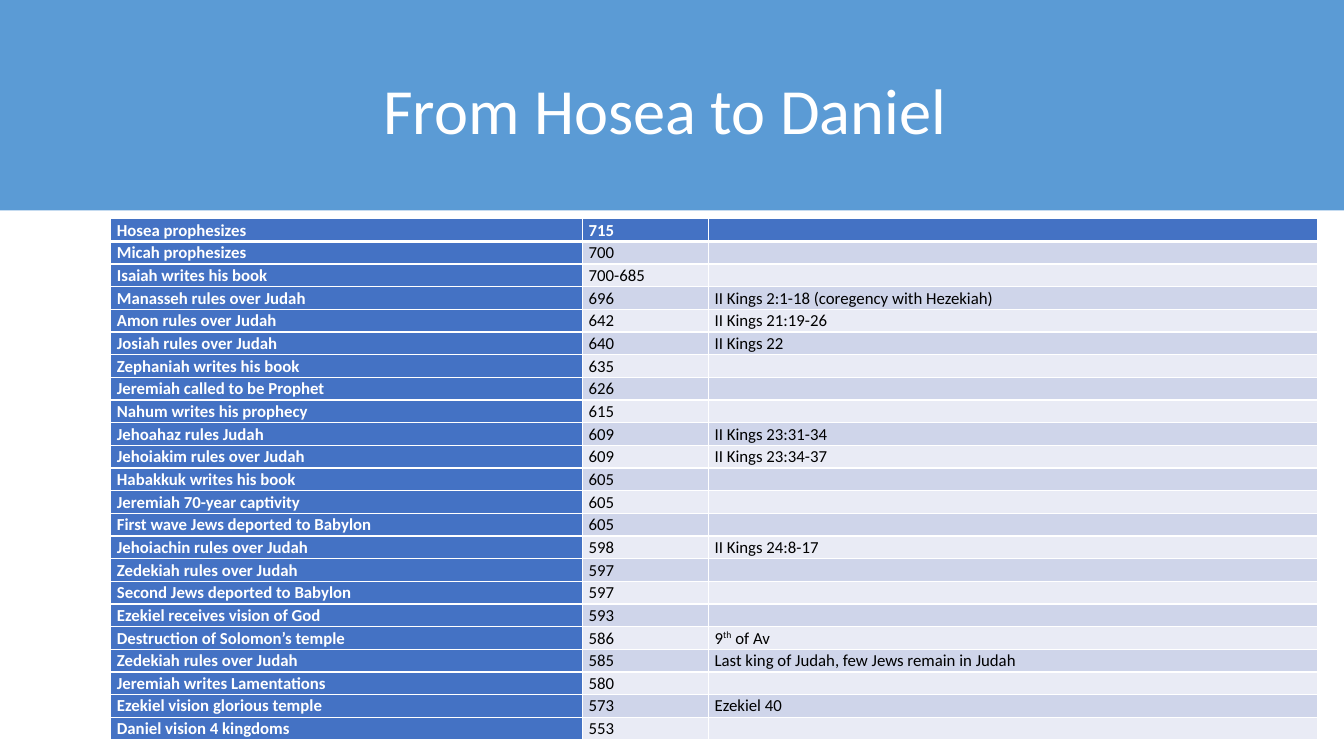
from dataclasses import dataclass

from lxml import etree
from pptx import Presentation
from pptx import util as u
from pptx.dml import color as dml
from pptx.enum import shapes, text
from pptx.oxml import ns

Pt = u.Pt
FONT = "Calibri"
WHITE, BLACK, SKY, BLUE = "FFFFFF", "000000", "5B9BD5", "4472C4"
BANDS = ("E9EBF5", "CFD5EA")
WIDTHS = (336.96, 90, 434.88)
ROW = 16.2


@dataclass
class Event:
    name: str
    year: str
    note: str = ""  # carets enclose a superscript


EVENTS = [
    Event("Hosea prophesizes", "715"),
    Event("Micah prophesizes", "700"),
    Event("Isaiah writes his book", "700-685"),
    Event("Manasseh rules over Judah", "696", "II Kings 2:1-18 (coregency with Hezekiah)"),
    Event("Amon rules over Judah", "642", "II Kings 21:19-26"),
    Event("Josiah rules over Judah", "640", "II Kings 22"),
    Event("Zephaniah writes his book", "635"),
    Event("Jeremiah called to be Prophet", "626"),
    Event("Nahum writes his prophecy", "615"),
    Event("Jehoahaz rules Judah", "609", "II Kings 23:31-34"),
    Event("Jehoiakim rules over Judah", "609", "II Kings 23:34-37"),
    Event("Habakkuk writes his book", "605"),
    Event("Jeremiah 70-year captivity", "605"),
    Event("First wave Jews deported to Babylon", "605"),
    Event("Jehoiachin rules over Judah", "598", "II Kings 24:8-17"),
    Event("Zedekiah rules over Judah", "597"),
    Event("Second Jews deported to Babylon", "597"),
    Event("Ezekiel receives vision of God", "593"),
    Event("Destruction of Solomon’s temple", "586", "9^th^ of Av"),
    Event("Zedekiah rules over Judah", "585", "Last king of Judah, few Jews remain in Judah"),
    Event("Jeremiah writes Lamentations", "580"),
    Event("Ezekiel vision glorious temple", "573", "Ezekiel 40"),
    Event("Daniel vision 4 kingdoms", "553"),
]


def rgb(code: str) -> dml.RGBColor:
    return dml.RGBColor.from_string(code)


def paint(part, code: str) -> None:
    part.fill.solid()
    part.fill.fore_color.rgb = rgb(code)


def style(run, size: float, code: str, bold: bool = False) -> None:
    font = run.font
    font.name, font.size, font.bold = FONT, Pt(size), bold
    font.color.rgb = rgb(code)


def edge(cell, side: str, width: float) -> None:
    line = etree.SubElement(cell._tc.get_or_add_tcPr(), ns.qn(f"a:ln{side}"), w=str(Pt(width)))
    fill = etree.SubElement(line, ns.qn("a:solidFill"))
    etree.SubElement(fill, ns.qn("a:srgbClr"), val=WHITE)


def write(cell, words: str, code: str, bold: bool) -> None:
    cell.margin_left = cell.margin_right = Pt(4.32)
    cell.margin_top = cell.margin_bottom = 0
    para = cell.text_frame.paragraphs[0]
    para.line_spacing = 1.07
    if not words:
        # An empty cell needs a small end mark to keep its row low
        etree.SubElement(para._p, ns.qn("a:endParaRPr"), sz="1200")
        return
    for i, piece in enumerate(words.split("^")):
        run = para.add_run()
        run.text = piece
        style(run, 12, code, bold)
        if i % 2:
            run.font._element.set("baseline", "30000")


def add_head(slide) -> None:
    band = slide.shapes.add_shape(shapes.MSO_SHAPE.RECTANGLE, 0, 0, Pt(960), Pt(150.4))
    band.shadow.inherit = False
    paint(band, SKY)
    band.line.fill.background()

    box = slide.shapes.add_textbox(Pt(66), Pt(28.8), Pt(828), Pt(104.4))
    frame = box.text_frame
    frame.word_wrap = True
    frame.vertical_anchor = text.MSO_ANCHOR.MIDDLE
    frame.text = "From Hosea to Daniel "
    para = frame.paragraphs[0]
    para.alignment = text.PP_ALIGN.CENTER
    para.line_spacing = 0.9
    style(para.runs[0], 46, WHITE)


def add_grid(slide) -> None:
    count = len(EVENTS)
    grid = slide.shapes.add_table(
        count, len(WIDTHS), Pt(79.2), Pt(156.24), Pt(sum(WIDTHS)), Pt(ROW * count)
    ).table
    for col, width in zip(grid.columns, WIDTHS):
        col.width = Pt(width)
    for r, event in enumerate(EVENTS):
        grid.rows[r].height = Pt(ROW)
        for c, words in enumerate((event.name, event.year, event.note)):
            cell = grid.cell(r, c)
            dark = r == 0 or c == 0
            write(cell, words, WHITE if dark else BLACK, dark)
            # The rule below the first row is heavier
            for side, heavy in (("L", False), ("R", False), ("T", r == 1), ("B", r == 0)):
                edge(cell, side, 3 if heavy else 1)
            paint(cell, BLUE if dark else BANDS[r % 2])


def main() -> None:
    deck = Presentation()
    deck.slide_width, deck.slide_height = Pt(960), Pt(540)
    slide = deck.slides.add_slide(deck.slide_layouts[6])
    add_head(slide)
    add_grid(slide)
    deck.save("out.pptx")


if __name__ == "__main__":
    main()
